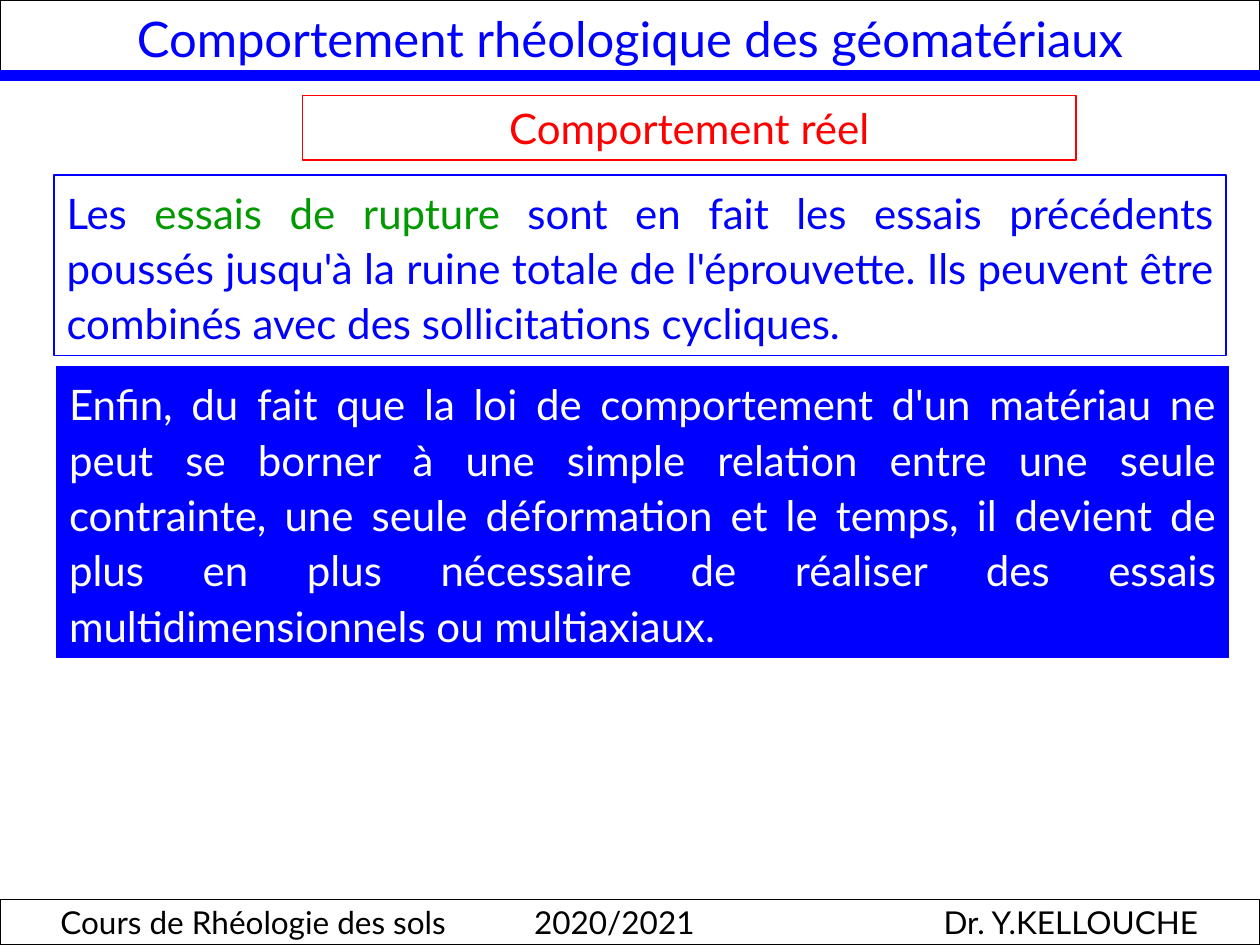
"""Builds a slide on the real behaviour of geomaterials."""
from dataclasses import dataclass

from lxml import etree
from pptx import Presentation
from pptx import util as u
from pptx.dml.color import RGBColor
from pptx.enum import shapes, text
from pptx.oxml.ns import qn

COLORS = {"blue": "0000FF", "red": "FF0000", "green": "009900",
          "white": "FFFFFF", "black": "000000"}


@dataclass
class Span:
    words: str
    color: str


@dataclass
class Panel:
    left: float
    top: float
    width: float
    height: float
    fill: str
    line: str
    spans: list[Span]
    size: float = 24
    line_width: float = 0.75
    align: text.PP_ALIGN = text.PP_ALIGN.JUSTIFY
    spacing: float = 1.0
    tabs: tuple[tuple[float, str], ...] = ()
    inset: float = 0.1


TITLE = Panel(0, 0, 10, 0.6, "white", "black",
              [Span("Comportement rhéologique des géomatériaux", "blue")],
              size=28, line_width=1.5, align=text.PP_ALIGN.CENTER)

PANELS = [
    Panel(2.4, 0.76, 6.14, 0.51, "white", "red",
          [Span("Comportement réel", "red")], align=text.PP_ALIGN.CENTER),
    Panel(0.43, 1.39, 9.3, 1.43, "white", "blue",
          [Span("Les ", "blue"), Span("essais de rupture", "green"),
           Span(" sont en fait les essais précédents poussés jusqu'à la ruine "
                "totale de l'éprouvette. Ils peuvent être combinés avec des "
                "sollicitations cycliques.", "blue")], spacing=1.1),
    Panel(0.45, 2.91, 9.3, 2.31, "blue", "blue",
          [Span("Enfin, du fait que la loi de comportement d'un matériau ne peut "
                "se borner à une simple relation entre une seule contrainte, une "
                "seule déformation et le temps, il devient de plus en plus "
                "nécessaire de réaliser des essais multidimensionnels ou "
                "multiaxiaux.", "white")], spacing=1.1),
    Panel(0, 7.14, 10, 0.36, "white", "black",
          [Span("Cours de Rhéologie des sols\t2020/2021\tDr. Y.KELLOUCHE", "black")],
          size=18, align=text.PP_ALIGN.LEFT,
          tabs=((3.76, "l"), (9.03, "r")), inset=0.48),
]


def rgb(name: str) -> RGBColor:
    return RGBColor.from_string(COLORS[name])


def add_tabs(para, tabs: tuple[tuple[float, str], ...]) -> None:
    tab_list = etree.SubElement(para._p.get_or_add_pPr(), qn("a:tabLst"))
    for position, align in tabs:
        etree.SubElement(tab_list, qn("a:tab"), pos=str(u.Inches(position)), algn=align)


def format_panel(box, panel: Panel) -> None:
    box.left, box.top = u.Inches(panel.left), u.Inches(panel.top)
    box.width, box.height = u.Inches(panel.width), u.Inches(panel.height)
    box.fill.solid()
    box.fill.fore_color.rgb = rgb(panel.fill)
    box.line.color.rgb = rgb(panel.line)
    box.line.width = u.Pt(panel.line_width)
    frame = box.text_frame
    frame.word_wrap = True
    frame.auto_size = text.MSO_AUTO_SIZE.NONE
    frame.vertical_anchor = text.MSO_ANCHOR.MIDDLE
    frame.margin_left = u.Inches(panel.inset)
    para = frame.paragraphs[0]
    para.alignment = panel.align
    para.line_spacing = panel.spacing
    if panel.tabs:
        add_tabs(para, panel.tabs)
    para.font.name = "Lato"
    para.font.size = u.Pt(panel.size)
    if len(panel.spans) == 1:
        para.font.color.rgb = rgb(panel.spans[0].color)
    for span in panel.spans:
        run = para.add_run()
        run.text = span.words
        if len(panel.spans) > 1:
            run.font.color.rgb = rgb(span.color)


def add_panel(page, panel: Panel) -> None:
    box = page.shapes.add_shape(shapes.MSO_SHAPE.RECTANGLE, 0, 0, 0, 0)
    box.shadow.inherit = False
    format_panel(box, panel)


def add_rule(page, top: float, width: float, color: str) -> None:
    rule = page.shapes.add_connector(shapes.MSO_CONNECTOR.STRAIGHT, 0, u.Inches(top),
                                     u.Inches(10), u.Inches(top))
    rule.line.color.rgb = rgb(color)
    rule.line.width = u.Pt(width)
    etree.SubElement(rule._element.spPr, qn("a:effectLst"))


def main() -> None:
    deck = Presentation()
    deck.slide_width, deck.slide_height = u.Inches(10), u.Inches(7.5)
    page = deck.slides.add_slide(deck.slide_layouts[5])
    format_panel(page.shapes.title, TITLE)
    add_rule(page, TITLE.height, 6, "blue")
    for panel in PANELS:
        add_panel(page, panel)
    deck.save("out.pptx")


if __name__ == "__main__":
    main()
